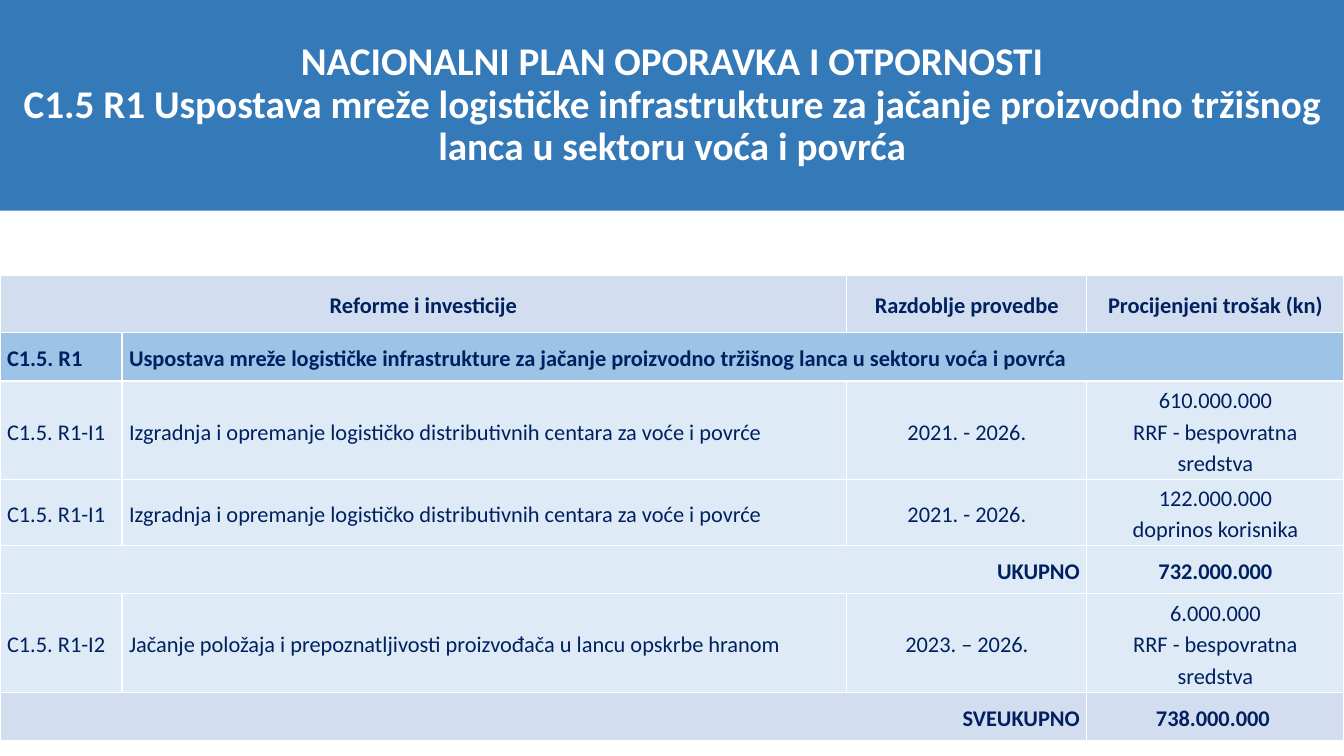
from copy import deepcopy

from lxml.etree import SubElement
from pptx import Presentation
from pptx.dml.color import RGBColor
from pptx.enum.text import MSO_ANCHOR, MSO_AUTO_SIZE, PP_ALIGN
from pptx.oxml.ns import qn
from pptx.util import Pt

PX = 9144
WIDTH, HEIGHT = 1333, 750
FONT = "Calibri"
COLORS = {
    "banner": "2E75B6",
    "white": "FFFFFF",
    "navy": "002060",
    "head": "D2DEEF",
    "reform": "9DC3E6",
    "pale": "DEEBF7",
}
LEFT, MID, RIGHT = PP_ALIGN.LEFT, PP_ALIGN.CENTER, PP_ALIGN.RIGHT
COLS = [121, 719, 238, 255]
ALIGNS = [LEFT, LEFT, MID, MID]
TITLE = (
    "NACIONALNI PLAN OPORAVKA I OTPORNOSTI\v"
    "C1.5 R1 Uspostava mreže logističke infrastrukture za jačanje "
    "proizvodno tržišnog lanca u sektoru voća i povrća"
)
REFORM = (
    "Uspostava mreže logističke infrastrukture za jačanje "
    "proizvodno tržišnog lanca u sektoru voća i povrća"
)
CENTRES = "Izgradnja i opremanje logističko distributivnih centara za voće i povrće"
STATUS = "Jačanje položaja i prepoznatljivosti proizvođača u lancu opskrbe hranom"
GRANT = "RRF - bespovratna sredstva"
HEADS = ["Reforme i investicije", None, "Razdoblje provedbe", "Procijenjeni trošak (kn)"]
ROWS = [
    (57, "head", True, HEADS),
    (48, "reform", True, ["C1.5. R1", REFORM, None, None]),
    (98, "pale", False, ["C1.5. R1-I1", CENTRES, "2021. - 2026.", f"610.000.000\n{GRANT}"]),
    (65, "pale", False, ["C1.5. R1-I1", CENTRES, "2021. - 2026.", "122.000.000\ndoprinos korisnika"]),
    (48, "pale", True, ["UKUPNO", None, None, "732.000.000"]),
    (98, "pale", False, ["C1.5. R1-I2", STATUS, "2023. – 2026.", f"6.000.000\n{GRANT}"]),
    (48, "head", True, ["SVEUKUPNO", None, None, "738.000.000 "]),
]


def paint(fill, color):
    """Give a fill one solid colour."""
    fill.solid()
    fill.fore_color.rgb = RGBColor.from_string(COLORS[color])


def style(par, size, color, bold, align, space):
    """Format a paragraph and all its runs."""
    par.alignment = align
    par.line_spacing = space
    for run in par.runs:
        font = run.font
        font.name, font.size, font.bold = FONT, Pt(size), bold
        font.color.rgb = RGBColor.from_string(COLORS[color])


def banner(slide):
    """Turn the title placeholder into the blue banner."""
    title = slide.shapes.title
    title.left, title.top = 0, 0
    title.width, title.height = WIDTH * PX, 209 * PX
    paint(title.fill, "banner")
    tint = title.fill._xPr.find(qn("a:solidFill"))[0]
    SubElement(tint, qn("a:alpha"), val="97000")
    frame = title.text_frame
    frame.text = TITLE
    frame.word_wrap = True
    frame.auto_size = MSO_AUTO_SIZE.NONE
    frame.vertical_anchor = MSO_ANCHOR.MIDDLE
    par = frame.paragraphs[0]
    style(par, 28, "white", True, MID, 0.9)
    for gap in par._p.findall(qn("a:br")):
        gap.append(deepcopy(par.runs[0]._r.rPr))


def border(cell):
    """Draw a thin white line on each side of a cell."""
    props = cell._tc.get_or_add_tcPr()
    for spot, side in enumerate(("lnL", "lnR", "lnT", "lnB")):
        line = SubElement(props, qn(f"a:{side}"), w="12700")
        fill = SubElement(line, qn("a:solidFill"))
        SubElement(fill, qn("a:srgbClr"), val=COLORS["white"])
        props.insert(spot, line)


def write(cell, text, bold, align, space):
    """Fill a cell with centred-height navy text."""
    cell.text = text
    for par in cell.text_frame.paragraphs:
        style(par, 16, "navy", bold, align, 1.15)
        par.space_before = par.space_after = Pt(space)


def costs(slide):
    """Build the table of reforms and their costs."""
    tall = sum(row[0] for row in ROWS)
    frame = slide.shapes.add_table(
        len(ROWS), len(COLS), 0, 273 * PX, WIDTH * PX, tall * PX)
    table = frame.table
    table.first_row = table.horz_banding = False
    for col, wide in zip(table.columns, COLS):
        col.width = wide * PX
    for r, (high, color, bold, texts) in enumerate(ROWS):
        table.rows[r].height = high * PX
        for c, text in enumerate(texts):
            cell = table.cell(r, c)
            cell.margin_left = cell.margin_right = 7 * PX
            cell.margin_top = cell.margin_bottom = 0
            cell.vertical_anchor = MSO_ANCHOR.MIDDLE
            paint(cell.fill, color)
            border(cell)
            if text is None:
                continue
            end = c
            while end + 1 < len(texts) and texts[end + 1] is None:
                end += 1
            if end > c:
                cell.merge(table.cell(r, end))
            align = ALIGNS[c]
            if r == 0:
                align = MID
            elif c == 0 and end > c:
                align = RIGHT
            write(cell, text, bold, align, 3 if r == 0 else 0)


def main():
    """Make the slide and save it."""
    deck = Presentation()
    deck.slide_width, deck.slide_height = WIDTH * PX, HEIGHT * PX
    slide = deck.slides.add_slide(deck.slide_layouts[5])
    banner(slide)
    costs(slide)
    deck.save("out.pptx")


if __name__ == "__main__":
    main()
